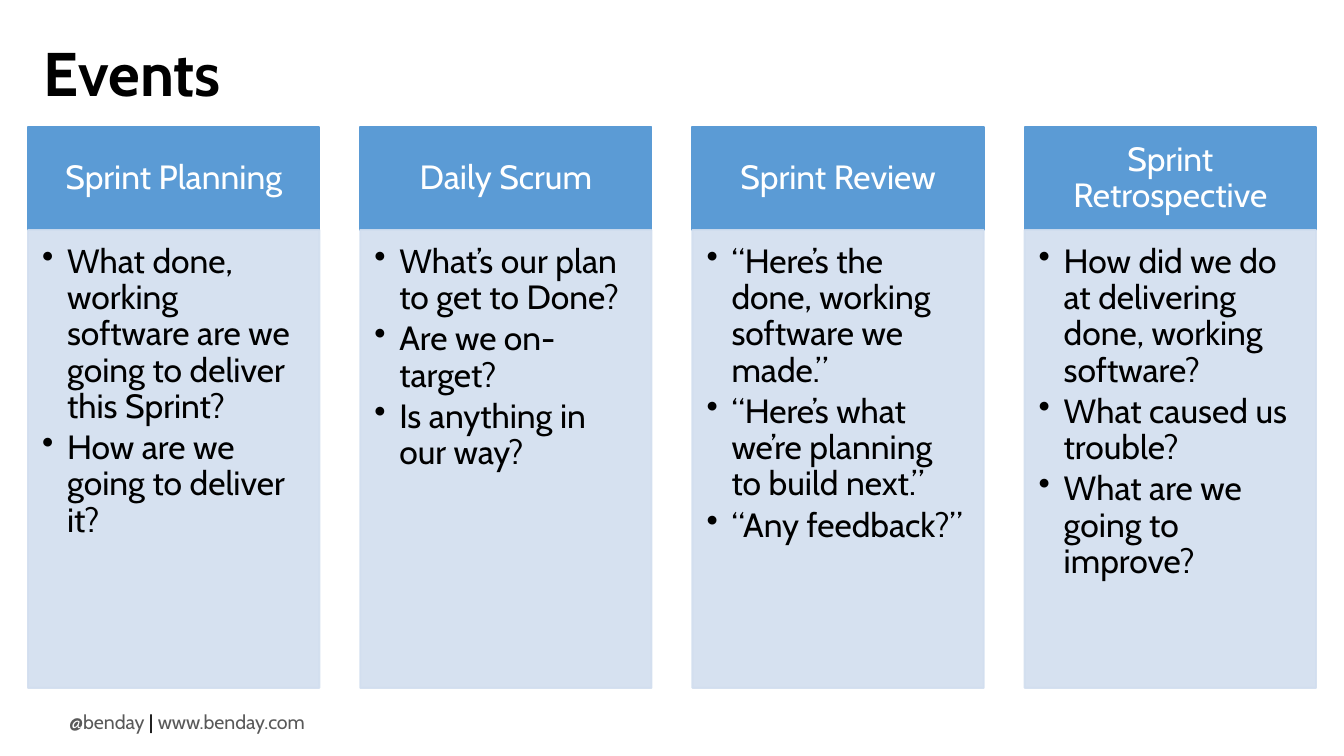
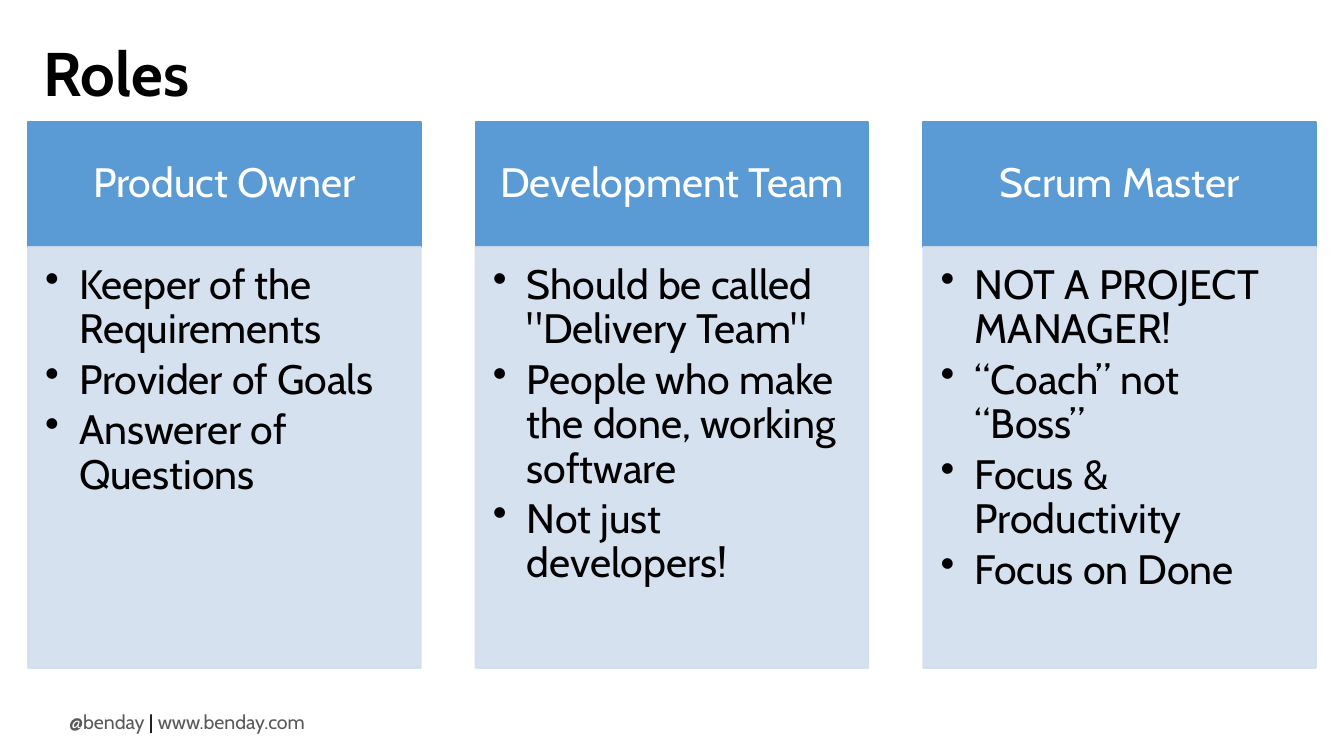
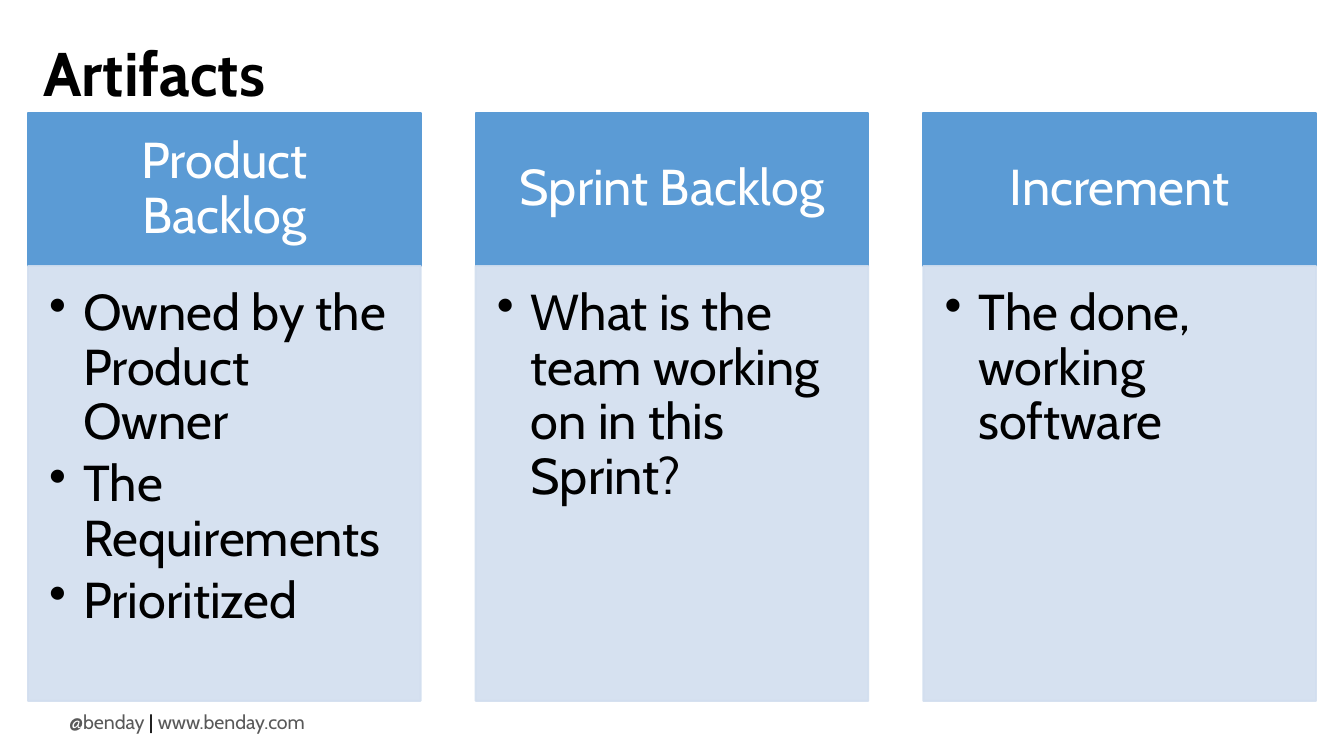
from lxml import etree
from pptx import Presentation
from pptx import util as u
from pptx.dml.color import RGBColor
from pptx.enum import shapes, text
from pptx.oxml.ns import qn

FONT = "Cabin"
BLACK, WHITE, GREY = "000000", "FFFFFF", "595959"
HEADER_BLUE, BODY_BLUE = "5B9BD5", "D2DEEF"
BODY_OPACITY = 90

SLIDE_WIDTH, SLIDE_HEIGHT = 1344, 756
TITLE_BOX = (30, 31, 1158, 91)
FOOTER_BOX = (56, 703, 280, 38)
COLUMNS_LEFT, COLUMNS_WIDTH = 28, 1288
GAP_RATIO = 0.14  # gap between columns as a share of the column width
# Insets (left, top, right, bottom) as shares of the text size
HEADER_INSETS = (0.56, 0.32, 0.56, 0.32)
BODY_INSETS = (0.42, 0.42, 0.56, 0.64)

FOOTER = [("@benday", GREY), (" | ", BLACK), ("www.benday.com", GREY)]

SLIDES = [
    {
        "title": "Events", "size": 18, "indent": 25,
        "top": 127, "header_height": 103, "body_height": 458,
        "columns": [
            ("Sprint Planning", [
                "What done, working software are we going to deliver this Sprint?",
                "How are we going to deliver it?"]),
            ("Daily Scrum", [
                "What’s our plan to get to Done?",
                "Are we on-target?",
                "Is anything in our way?"]),
            ("Sprint Review", [
                "“Here’s the done, working software we made.”",
                "“Here’s what we’re planning to build next.”",
                "“Any feedback?”"]),
            ("Sprint Retrospective", [
                "How did we do at delivering done, working software?",
                "What caused us trouble?",
                "What are we going to improve?"]),
        ],
    },
    {
        "title": "Roles", "size": 22, "indent": 34,
        "top": 122, "header_height": 125, "body_height": 421,
        "columns": [
            ("Product Owner", [
                "Keeper of the Requirements",
                "Provider of Goals",
                "Answerer of Questions"]),
            ("Development Team", [
                'Should be called "Delivery Team"',
                "People who make the done, working software",
                "Not just developers!"]),
            ("Scrum Master", [
                "NOT A PROJECT MANAGER!",
                "“Coach” not “Boss”",
                "Focus & Productivity",
                "Focus on Done"]),
        ],
    },
    {
        "title": "Artifacts", "size": 27, "indent": 34,
        "top": 113, "header_height": 153, "body_height": 435,
        "columns": [
            ("Product Backlog", [
                "Owned by the Product Owner",
                "The Requirements",
                "Prioritized"]),
            ("Sprint Backlog", ["What is the team working on in this Sprint?"]),
            ("Increment", ["The done, working software"]),
        ],
    },
]


def px(length):
    return u.Emu(round(length * 914400 / 134.4))


def color(hex_string):
    return RGBColor.from_string(hex_string)


def style_font(font, size, hex_string, bold=False):
    font.name, font.size, font.bold = FONT, u.Pt(size), bold
    font.color.rgb = color(hex_string)


def add_panel(slide, box, fill, size, insets, anchor):
    panel = slide.shapes.add_shape(shapes.MSO_SHAPE.RECTANGLE, *map(px, box))
    panel.shadow.inherit = False
    panel.fill.solid()
    panel.fill.fore_color.rgb = color(fill)
    panel.line.color.rgb = color(fill)
    panel.line.width = u.Pt(1)
    frame = panel.text_frame
    frame.word_wrap = True
    frame.vertical_anchor = anchor
    (frame.margin_left, frame.margin_top,
     frame.margin_right, frame.margin_bottom) = [u.Pt(size * share) for share in insets]
    return panel


def set_opacity(shape, percent):
    """Apply one opacity to the fill and the outline."""
    for solid_color in shape._element.spPr.iter(qn("a:srgbClr")):
        etree.SubElement(solid_color, qn("a:alpha"), val=str(percent * 1000))


def add_bullet(paragraph, indent):
    properties = paragraph._p.get_or_add_pPr()
    properties.set("marL", str(px(indent)))
    properties.set("indent", str(-px(indent)))
    etree.SubElement(properties, qn("a:buChar"), char="•")


def add_header(slide, box, label, size):
    panel = add_panel(slide, box, HEADER_BLUE, size, HEADER_INSETS, text.MSO_ANCHOR.MIDDLE)
    panel.text_frame.text = label
    paragraph = panel.text_frame.paragraphs[0]
    paragraph.alignment = text.PP_ALIGN.CENTER
    paragraph.line_spacing = 0.9
    style_font(paragraph.runs[0].font, size, WHITE)


def add_body(slide, box, points, size, indent):
    panel = add_panel(slide, box, BODY_BLUE, size, BODY_INSETS, text.MSO_ANCHOR.TOP)
    set_opacity(panel, BODY_OPACITY)
    panel.text_frame.text = "\n".join(points)
    for paragraph in panel.text_frame.paragraphs:
        add_bullet(paragraph, indent)
        paragraph.level = 1
        paragraph.alignment = text.PP_ALIGN.LEFT
        paragraph.line_spacing = 0.9
        paragraph.space_after = u.Pt(size * 0.15)
        style_font(paragraph.runs[0].font, size, BLACK)


def set_title(slide, title):
    shape = slide.shapes.title
    shape.left, shape.top, shape.width, shape.height = map(px, TITLE_BOX)
    frame = shape.text_frame
    frame.text = title
    frame.auto_size = text.MSO_AUTO_SIZE.NONE
    frame.vertical_anchor = text.MSO_ANCHOR.MIDDLE
    paragraph = frame.paragraphs[0]
    paragraph.alignment = text.PP_ALIGN.LEFT
    paragraph.line_spacing = 0.9
    style_font(paragraph.runs[0].font, 33, BLACK, bold=True)


def add_columns(slide, content):
    count = len(content["columns"])
    width = COLUMNS_WIDTH / (count + (count - 1) * GAP_RATIO)
    top, header_height = content["top"], content["header_height"]
    for index, (label, points) in enumerate(content["columns"]):
        left = COLUMNS_LEFT + index * width * (1 + GAP_RATIO)
        add_header(slide, (left, top, width, header_height), label, content["size"])
        add_body(slide, (left, top + header_height, width, content["body_height"]),
                 points, content["size"], content["indent"])


def move_footer_to_layout(slide):
    """Build the footer on a slide, then hand it to the layout all slides share."""
    box = slide.shapes.add_textbox(*map(px, FOOTER_BOX))
    frame = box.text_frame
    frame.word_wrap = False
    frame.auto_size = text.MSO_AUTO_SIZE.SHAPE_TO_FIT_TEXT
    for words, hex_string in FOOTER:
        run = frame.paragraphs[0].add_run()
        run.text = words
        style_font(run.font, 10.5, hex_string)
    slide.slide_layout.shapes._spTree.append(box._element)


def main():
    presentation = Presentation()
    presentation.slide_width, presentation.slide_height = px(SLIDE_WIDTH), px(SLIDE_HEIGHT)
    title_only = presentation.slide_layouts[5]
    for content in SLIDES:
        slide = presentation.slides.add_slide(title_only)
        set_title(slide, content["title"])
        add_columns(slide, content)
    move_footer_to_layout(presentation.slides[0])
    presentation.save("out.pptx")


if __name__ == "__main__":
    main()
